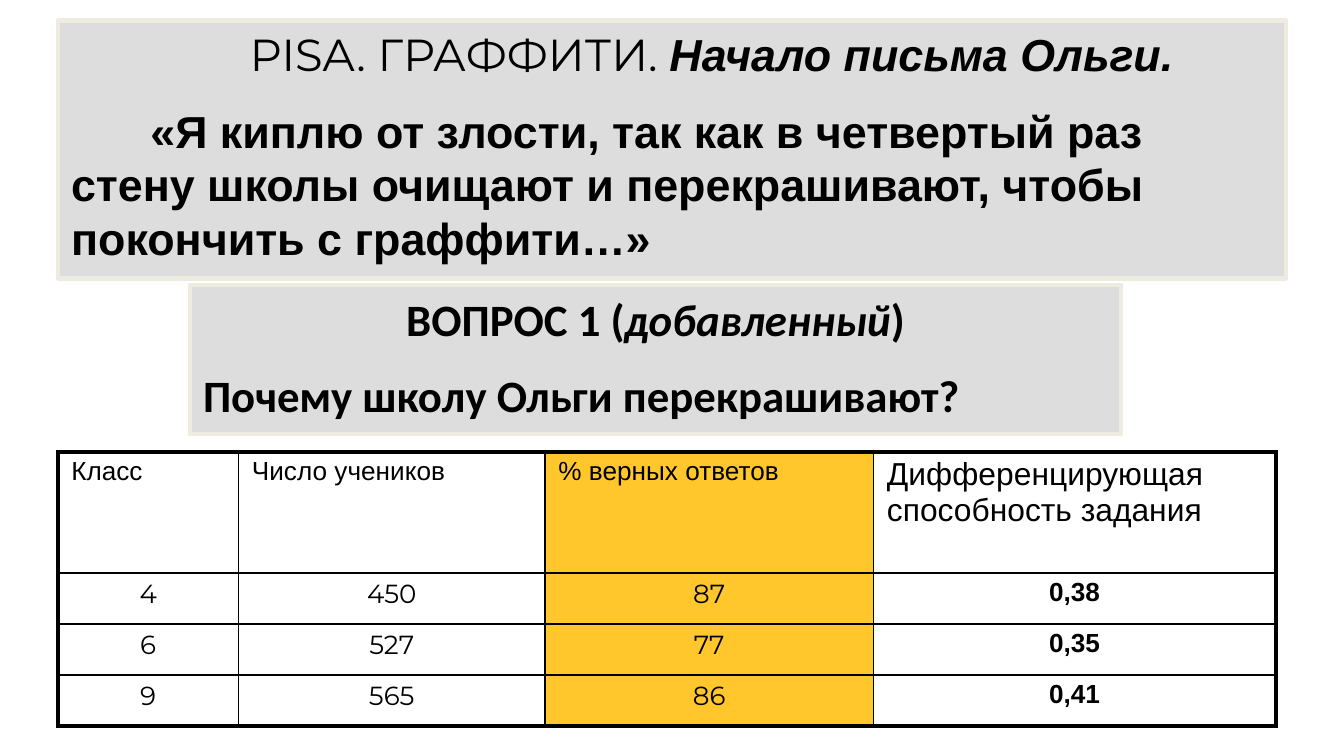
from lxml.etree import SubElement
from pptx import Presentation
from pptx.dml.color import RGBColor
from pptx.enum.shapes import MSO_SHAPE
from pptx.enum.text import MSO_ANCHOR, PP_ALIGN
from pptx.oxml.ns import qn
from pptx.util import Pt

COLORS = {"panel": "DDDDDD", "edge": "EEECE1", "accent": "FFC72B", "paper": "FFFFFF", "ink": "000000"}


def add_run(paragraph, text, font_name, size, bold=False, italic=False):
    run = paragraph.add_run()
    run.text = text
    run.font.name = font_name
    run.font.size = Pt(size)
    run.font.bold = bold
    run.font.italic = italic
    run.font.color.rgb = RGBColor.from_string(COLORS["ink"])


def add_border(cell, side, width):
    line = SubElement(cell._tc.get_or_add_tcPr(), qn(f"a:ln{side}"), w=str(Pt(width)))
    fill = SubElement(line, qn("a:solidFill"))
    SubElement(fill, qn("a:srgbClr"), val=COLORS["ink"])


presentation = Presentation()
presentation.slide_width = Pt(720)
presentation.slide_height = Pt(405)
slide = presentation.slides.add_slide(presentation.slide_layouts[6])

panels = [
    ((31, 11, 658, 138.2), 42.5, [
        (PP_ALIGN.CENTER, [("PISA. ГРАФФИТИ. ", "Montserrat", False, False),
                           ("Начало письма Ольги.", "Arial", True, True)]),
        (PP_ALIGN.LEFT, [("«Я киплю от злости, так как в четвертый раз стену школы очищают "
                          "и перекрашивают, чтобы покончить с граффити…»", "Arial", True, False)]),
    ]),
    ((101.7, 152.7, 499, 80), 0, [
        (PP_ALIGN.CENTER, [("ВОПРОС 1 (", "Calibri", True, False),
                           ("добавленный", "Calibri", True, True),
                           (")", "Calibri", True, False)]),
        (PP_ALIGN.LEFT, [("Почему школу Ольги перекрашивают?", "Calibri", True, False)]),
    ]),
]

for box, indent, paragraphs in panels:
    shape = slide.shapes.add_shape(MSO_SHAPE.RECTANGLE, *[Pt(length) for length in box])
    shape.shadow.inherit = False
    shape.fill.solid()
    shape.fill.fore_color.rgb = RGBColor.from_string(COLORS["panel"])
    shape.line.color.rgb = RGBColor.from_string(COLORS["edge"])
    shape.line.width = Pt(2.25)
    frame = shape.text_frame
    frame.word_wrap = True
    frame.vertical_anchor = MSO_ANCHOR.TOP
    for index, (alignment, runs) in enumerate(paragraphs):
        paragraph = frame.add_paragraph() if index else frame.paragraphs[0]
        paragraph.alignment = alignment
        if index:
            paragraph.space_before = Pt(12)
        paragraph._p.get_or_add_pPr().set("indent", str(Pt(indent)))
        for text, font_name, bold, italic in runs:
            add_run(paragraph, text, font_name, 24, bold, italic)

column_widths = [96.8, 164.2, 176, 215.5]
row_heights = [65, 27.3, 27.3, 27.3]
rows = [
    ["Класс", "Число учеников", "% верных ответов", "Дифференцирующая способность задания"],
    ["4", "450", "87", "0,38"],
    ["6", "527", "77", "0,35"],
    ["9", "565", "86", "0,41"],
]
last_row, last_column = len(rows) - 1, len(column_widths) - 1

table = slide.shapes.add_table(len(rows), len(column_widths), Pt(31), Pt(242),
                               Pt(sum(column_widths)), Pt(sum(row_heights))).table
for column, width in zip(table.columns, column_widths):
    column.width = Pt(width)
for row, height in zip(table.rows, row_heights):
    row.height = Pt(height)

for row_index, values in enumerate(rows):
    for column_index, text in enumerate(values):
        cell = table.cell(row_index, column_index)
        is_header, is_last = row_index == 0, column_index == last_column
        cell.margin_left = cell.margin_right = Pt(7.2)
        cell.margin_top = cell.margin_bottom = Pt(2.7)
        outer_edges = {"L": column_index == 0, "R": is_last, "T": is_header, "B": row_index == last_row}
        for side, is_outer in outer_edges.items():
            add_border(cell, side, 2.25 if is_outer else 1)
        cell.fill.solid()
        cell.fill.fore_color.rgb = RGBColor.from_string(COLORS["accent" if column_index == 2 else "paper"])
        paragraph = cell.text_frame.paragraphs[0]
        paragraph.alignment = PP_ALIGN.LEFT if is_header else PP_ALIGN.CENTER
        add_run(paragraph, text, "Arial" if is_header or is_last else "Montserrat",
                17 if is_header and is_last else 14, bold=is_last and not is_header)

presentation.save("out.pptx")
